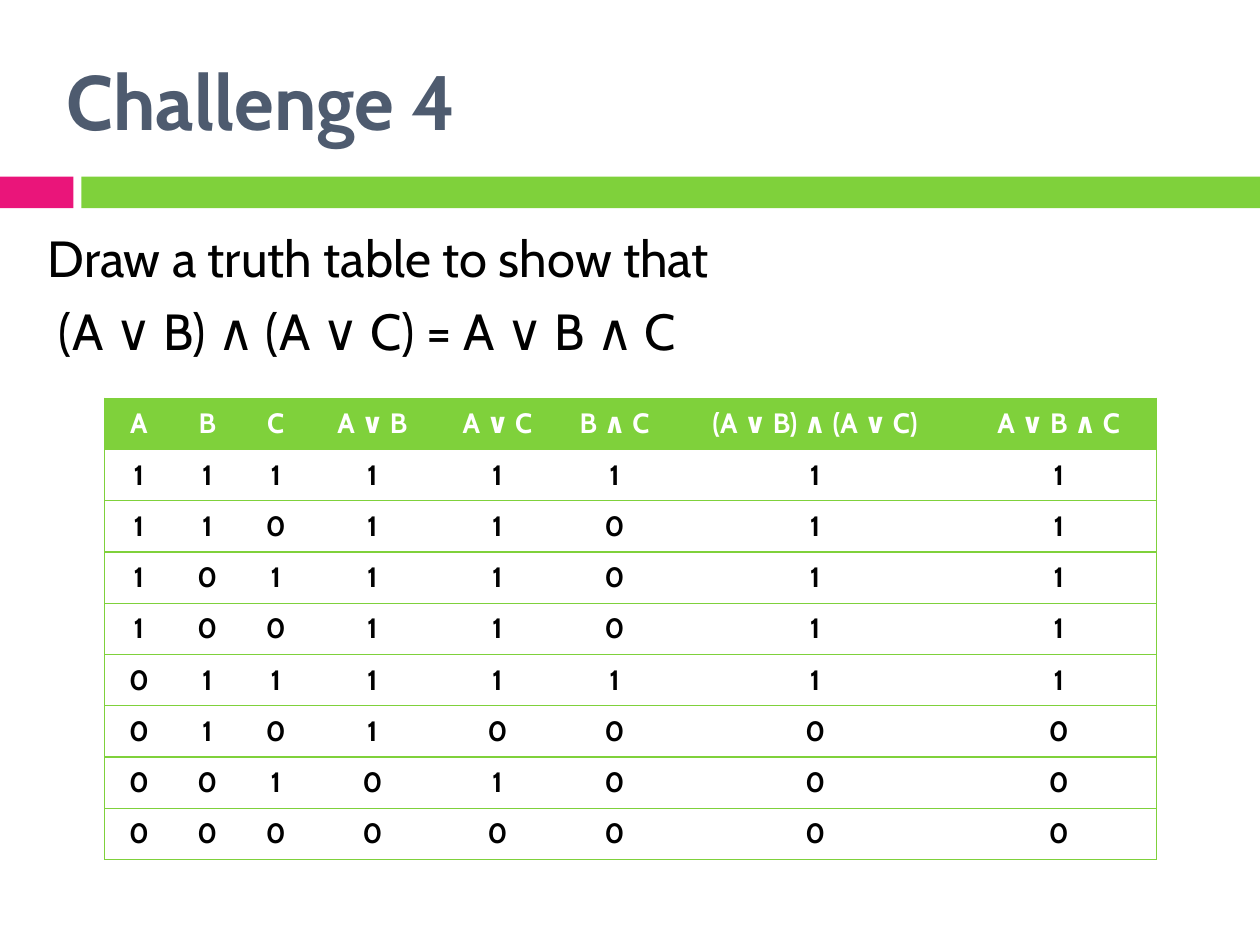
import dataclasses
import itertools

import lxml.etree
import pptx
import pptx.dml.color
import pptx.enum.shapes
import pptx.enum.text
import pptx.oxml.ns
import pptx.util

Cm = pptx.util.Cm
Pt = pptx.util.Pt
ALIGN = pptx.enum.text.PP_ALIGN
ANCHOR = pptx.enum.text.MSO_ANCHOR


@dataclasses.dataclass(frozen=True)
class Theme:
    font: str = "Cabin"
    green: str = "7FD13B"
    pink: str = "EA157A"
    slate: str = "4E5B6F"
    black: str = "000000"
    white: str = "FFFFFF"
    title_size: int = 44
    body_size: int = 29
    table_size: int = 16
    border_width: float = 0.79


THEME = Theme()
TITLE = "Challenge 4"
TASK = ("Draw a truth table to show that", " (A ∨ B) ∧ (A ∨ C) = A ∨ B ∧ C")
HEADINGS = ("A", "B", "C", "A ∨ B", "A ∨ C", "B ∧ C", "(A ∨ B) ∧ (A ∨ C)", "A ∨ B ∧ C")
COLUMN_WIDTHS = (1.38, 1.38, 1.38, 2.52, 2.52, 2.2, 5.89, 3.93)


def rgb(color):
    return pptx.dml.color.RGBColor.from_string(color)


def write_text(para, text, size, color, bold=False, align=ALIGN.LEFT, before=0):
    para.alignment = align
    para.space_before = Pt(before)
    span = para.add_run()
    span.text = text
    span.font.name = THEME.font
    span.font.size = Pt(size)
    span.font.bold = bold
    span.font.color.rgb = rgb(color)


def place(shape, box):
    shape.left, shape.top, shape.width, shape.height = (Cm(length) for length in box)


def add_title(page, box):
    title = page.shapes.title
    place(title, box)
    frame = title.text_frame
    frame.auto_size = pptx.enum.text.MSO_AUTO_SIZE.NONE
    frame.vertical_anchor = ANCHOR.MIDDLE
    write_text(frame.paragraphs[0], TITLE, THEME.title_size, THEME.slate, bold=True)


def add_band(page, box, accent=1.48, gap=0.16):
    left, top, width, height = box
    start = accent + gap
    bars = ((left, accent, THEME.pink), (left + start, width - start, THEME.green))
    for bar_left, bar_width, color in bars:
        bar = page.shapes.add_shape(
            pptx.enum.shapes.MSO_SHAPE.RECTANGLE,
            Cm(bar_left), Cm(top), Cm(bar_width), Cm(height),
        )
        bar.shadow.inherit = False
        bar.fill.solid()
        bar.fill.fore_color.rgb = rgb(color)
        bar.line.fill.background()


def add_task(page, box):
    frame = page.shapes.add_textbox(*(Cm(length) for length in box)).text_frame
    frame.word_wrap = True
    for index, text in enumerate(TASK):
        para = frame.add_paragraph() if index else frame.paragraphs[0]
        write_text(para, text, THEME.body_size, THEME.black, before=7)


def set_borders(cell, visible_sides):
    properties = cell._tc.get_or_add_tcPr()
    qn = pptx.oxml.ns.qn
    for side in "LRTB":
        line = lxml.etree.SubElement(properties, qn(f"a:ln{side}"))
        if side in visible_sides:
            line.set("w", str(int(Pt(THEME.border_width))))
            fill = lxml.etree.SubElement(line, qn("a:solidFill"))
            lxml.etree.SubElement(fill, qn("a:srgbClr"), val=THEME.green)
        else:
            lxml.etree.SubElement(line, qn("a:noFill"))


def truth_rows():
    for a, b, c in itertools.product((1, 0), repeat=3):
        yield a, b, c, a | b, a | c, b & c, (a | b) & (a | c), a | b & c


def add_truth_table(page, box):
    rows = [HEADINGS, *truth_rows()]
    table = page.shapes.add_table(
        len(rows), len(HEADINGS), *(Cm(length) for length in box)
    ).table
    table.horz_banding = False
    for column, width in zip(table.columns, COLUMN_WIDTHS):
        column.width = Cm(width)
    for row_index, values in enumerate(rows):
        table.rows[row_index].height = Cm(box[3] / len(rows))
        is_header = row_index == 0
        for column_index, value in enumerate(values):
            cell = table.cell(row_index, column_index)
            left_side = "L" if column_index == 0 else ""
            right_side = "R" if column_index == len(HEADINGS) - 1 else ""
            set_borders(cell, "TB" + left_side + right_side)
            if is_header:
                cell.fill.solid()
                cell.fill.fore_color.rgb = rgb(THEME.green)
            else:
                cell.fill.background()
            cell.vertical_anchor = ANCHOR.MIDDLE
            cell.margin_left = cell.margin_right = Cm(0.18)
            cell.margin_top = cell.margin_bottom = 0
            write_text(
                cell.text_frame.paragraphs[0], str(value), THEME.table_size,
                THEME.white if is_header else THEME.black,
                bold=True, align=ALIGN.CENTER,
            )


def main():
    deck = pptx.Presentation()
    deck.slide_width, deck.slide_height = Cm(25.4), Cm(19.05)
    page = deck.slides.add_slide(deck.slide_layouts.get_by_name("Title Only"))
    add_band(page, (0, 3.56, 25.4, 0.64))
    add_title(page, (1.09, 0.64, 23.8, 2.74))
    add_task(page, (0.71, 4.45, 23.8, 3.28))
    add_truth_table(page, (2.11, 8.03, sum(COLUMN_WIDTHS), 9.3))
    deck.save("out.pptx")


if __name__ == "__main__":
    main()
